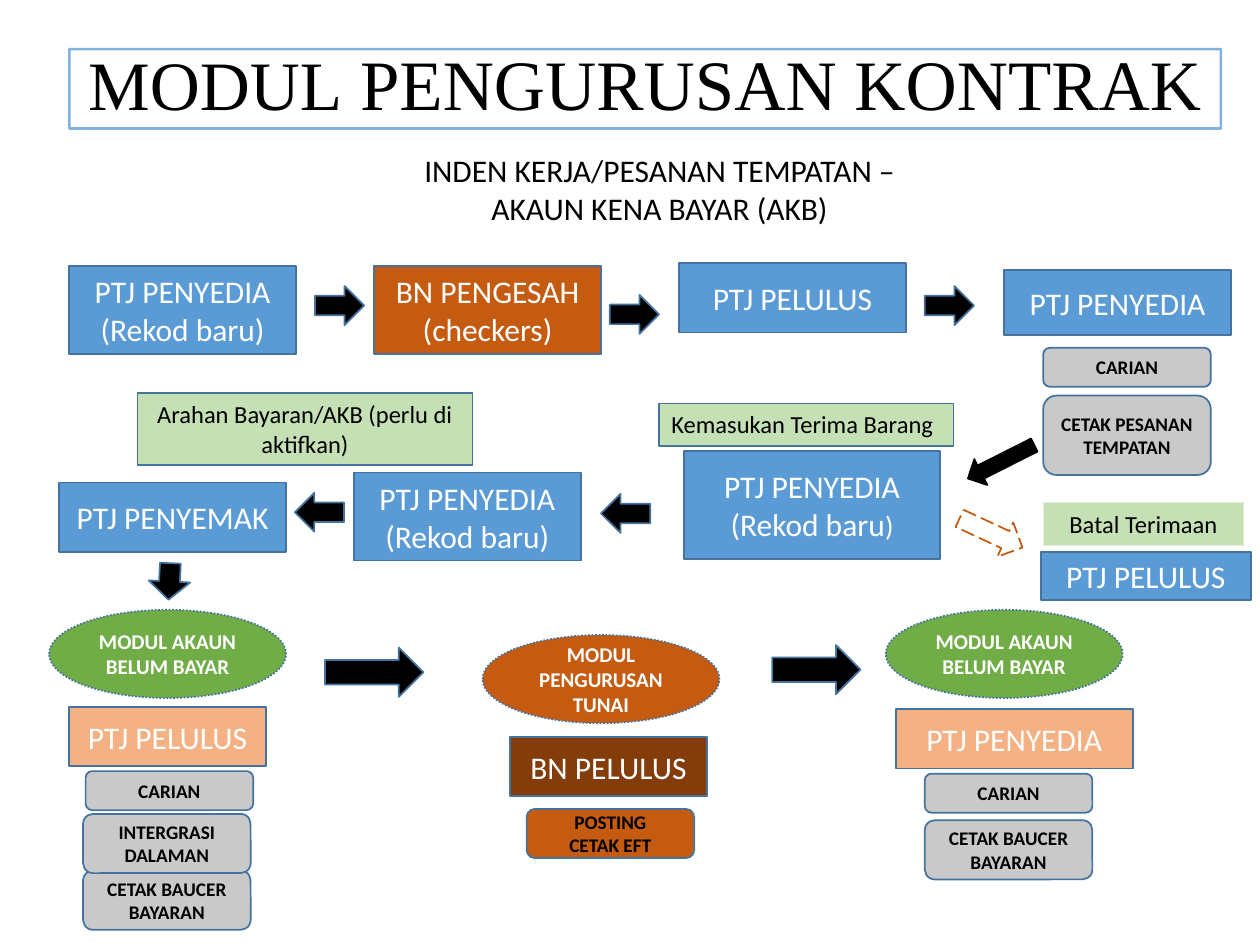
from lxml.etree import SubElement
from pptx import Presentation
from pptx.dml.color import RGBColor
from pptx.enum.dml import MSO_LINE
from pptx.enum.shapes import MSO_SHAPE
from pptx.enum.text import MSO_ANCHOR, MSO_AUTO_SIZE, PP_ALIGN
from pptx.oxml.ns import qn
from pptx.util import Inches, Pt

BLACK = RGBColor(0x00, 0x00, 0x00)
WHITE = RGBColor(0xFF, 0xFF, 0xFF)
BLUE = RGBColor(0x5B, 0x9B, 0xD5)
EDGE = RGBColor(0x43, 0x73, 0x9E)
RUST = RGBColor(0xC5, 0x5A, 0x11)
BROWN = RGBColor(0x84, 0x3C, 0x0B)
PEACH = RGBColor(0xF4, 0xB1, 0x83)
GREEN = RGBColor(0x70, 0xAD, 0x47)
PALE_GREEN = RGBColor(0xC5, 0xE0, 0xB4)
PALE_EDGE = RGBColor(0xE2, 0xF0, 0xD9)
GREY = RGBColor(0xC9, 0xC9, 0xC9)

# Common columns (left edges), rows (top edges) and sizes, in inches
MARGIN, RIGHT_COLUMN, END_COLUMN = 0.55, 8.28, 7.34
MODULE_ROW = 4.84
STEP_W, STEP_H, STEP_TALL = 1.8, 0.55, 0.7
NOTE_W, NOTE_H, NOTE_TALL = 1.33, 0.31, 0.47
MODULE_W, MODULE_H = 1.88, 0.7
ARROW_W, ARROW_H = 0.39, 0.31

prs = Presentation()
prs.slide_width, prs.slide_height = Inches(10), Inches(7.5)
slide = prs.slides.add_slide(prs.slide_layouts[5])


def write(target, text, size=18, color=WHITE, bold=False, font="Calibri",
          align=PP_ALIGN.CENTER, anchor=MSO_ANCHOR.MIDDLE, fit=MSO_AUTO_SIZE.NONE):
    """Fill a shape with text, one paragraph per line."""
    frame = target.text_frame
    frame.word_wrap, frame.auto_size, frame.vertical_anchor = True, fit, anchor
    frame.text = text
    for paragraph in frame.paragraphs:
        paragraph.alignment = align
        for run in paragraph.runs:
            run.font.name, run.font.size, run.font.bold = font, Pt(size), bold
            run.font.color.rgb = color
    return frame


def block(kind, left, top, width, height, fill=None, edge=EDGE, weight=1, dash=None):
    """Add a preset shape with flat fill and outline."""
    shape = slide.shapes.add_shape(kind, *map(Inches, (left, top, width, height)))
    shape.shadow.inherit = False
    if fill is None:
        shape.fill.background()
    else:
        shape.fill.solid()
        shape.fill.fore_color.rgb = fill
    shape.line.color.rgb, shape.line.width = edge, Pt(weight)
    if dash:
        shape.line.dash_style = dash
    return shape


# Title
title = slide.shapes.title
title.left, title.top, title.width, title.height = map(Inches, (MARGIN, 0.39, 9.14, 0.63))
title.line.color.rgb, title.line.width = BLUE, Pt(1.5)
edge_color = title.line.fill.fore_color and title._element.spPr.find(".//" + qn("a:srgbClr"))
SubElement(edge_color, qn("a:alpha"), val="76000")
heading = write(title, "MODUL", 39.6, BLACK, font="Times New Roman",
                anchor=MSO_ANCHOR.BOTTOM).paragraphs[0]
heading.line_spacing = 0.7
rest = heading.add_run()
rest.text = " PENGURUSAN KONTRAK"
rest.font.name, rest.font.size, rest.font.color.rgb = "Times New Roman", Pt(40.5), BLACK

# Subtitle
subtitle = slide.shapes.add_textbox(*map(Inches, (3.16, 1.15, 4.15, 0.71)))
write(subtitle, "INDEN KERJA/PESANAN TEMPATAN – AKAUN KENA BAYAR (AKB)", color=BLACK,
      anchor=MSO_ANCHOR.TOP, fit=MSO_AUTO_SIZE.SHAPE_TO_FIT_TEXT)

# Green captions above the steps
for text, left, top, width, height, edge, align in (
    ("Kemasukan Terima Barang", 5.23, 3.2, 2.34, 0.34, EDGE, PP_ALIGN.LEFT),
    ("Arahan Bayaran/AKB (perlu di aktifkan)", 1.09, 3.12, 2.66, 0.57, EDGE, PP_ALIGN.CENTER),
    ("Batal Terimaan", RIGHT_COLUMN, 3.99, 1.59, 0.34, PALE_EDGE, PP_ALIGN.CENTER),
):
    caption = block(MSO_SHAPE.RECTANGLE, left, top, width, height, PALE_GREEN, edge, 0.75)
    write(caption, text, 14, BLACK, align=align, anchor=MSO_ANCHOR.TOP,
          fit=MSO_AUTO_SIZE.SHAPE_TO_FIT_TEXT)

# Process steps
for text, left, top, width, height, fill in (
    ("PTJ PENYEDIA\n(Rekod baru)", MARGIN, 2.11, STEP_W, STEP_TALL, BLUE),
    ("BN PENGESAH\n(checkers)", 2.97, 2.11, STEP_W, STEP_TALL, RUST),
    ("PTJ PELULUS", 5.39, 2.09, STEP_W, STEP_H, BLUE),
    ("PTJ PENYEDIA", 7.97, 2.14, STEP_W, 0.52, BLUE),
    ("PTJ PENYEMAK", 0.47, 3.83, STEP_W, STEP_H, BLUE),
    ("PTJ PENYEDIA\n(Rekod baru)", 2.81, 3.75, STEP_W, STEP_TALL, BLUE),
    ("PTJ PELULUS", 8.26, 4.38, 1.67, 0.38, BLUE),
    ("PTJ PELULUS", MARGIN, 5.61, 1.56, NOTE_TALL, PEACH),
    ("BN PELULUS", 4.05, 5.85, 1.56, NOTE_TALL, BROWN),
    ("PTJ PENYEDIA", 7.11, 5.63, MODULE_W, NOTE_TALL, PEACH),
):
    write(block(MSO_SHAPE.RECTANGLE, left, top, width, height, fill), text)

# Goods receipt step, whose closing bracket is smaller
receipt = block(MSO_SHAPE.RECTANGLE, 5.43, 3.58, 2.03, 0.86, BLUE)
record_line = write(receipt, "PTJ PENYEDIA\n(Rekod baru").paragraphs[1]
bracket = record_line.add_run()
bracket.text = ")"
bracket.font.name, bracket.font.size, bracket.font.color.rgb = "Calibri", Pt(16), WHITE

# Modules
for text, left, top, fill in (
    ("MODUL AKAUN BELUM BAYAR", 0.39, MODULE_ROW, GREEN),
    ("MODUL PENGURUSAN TUNAI", 3.83, MODULE_ROW + 0.2, RUST),
    ("MODUL AKAUN BELUM BAYAR", 7.03, MODULE_ROW, GREEN),
):
    module = block(MSO_SHAPE.OVAL, left, top, MODULE_W, MODULE_H, fill,
                   dash=MSO_LINE.ROUND_DOT)
    write(module, text, 12, bold=True)

# Functions available at each step
for text, left, top, height, fill in (
    ("CARIAN", RIGHT_COLUMN, 2.76, NOTE_H, GREY),
    ("CETAK PESANAN TEMPATAN", RIGHT_COLUMN, 3.14, 0.63, GREY),
    ("CARIAN", 0.68, 6.12, NOTE_H, GREY),
    ("CETAK BAUCER BAYARAN", 0.66, 6.91, NOTE_TALL, GREY),
    ("INTERGRASI DALAMAN", 0.66, 6.46, NOTE_TALL, GREY),
    ("POSTING\nCETAK EFT", 4.18, 6.42, 0.39, RUST),
    ("CARIAN", END_COLUMN, 6.14, NOTE_H, GREY),
    ("CETAK BAUCER BAYARAN", END_COLUMN, 6.51, NOTE_TALL, GREY),
):
    function = block(MSO_SHAPE.ROUNDED_RECTANGLE, left, top, NOTE_W, height, fill)
    write(function, text, 11, BLACK, bold=True)

# Flow arrows
for left, top, width, height, angle, fill, edge, dash in (
    (2.5, 2.27, ARROW_W, ARROW_H, 0, BLACK, EDGE, None),
    (4.84, 2.34, ARROW_W, ARROW_H, 0, BLACK, EDGE, None),
    (END_COLUMN, 2.27, ARROW_W, ARROW_H, 0, BLACK, EDGE, None),
    (4.77, 3.92, ARROW_W, ARROW_H, 180, BLACK, EDGE, None),
    (2.34, 3.91, ARROW_W, ARROW_H, 180, BLACK, EDGE, None),
    (1.2, 4.45, 0.29, 0.33, 92.9, BLACK, EDGE, None),
    (2.58, 5.14, 0.78, 0.39, 0, BLACK, EDGE, None),
    (6.13, 5.12, 0.7, 0.39, 0, BLACK, EDGE, None),
    (7.65, 3.55, 0.59, 0.23, 153.2, BLACK, BLACK, None),
    (7.59, 4.08, 0.55, 0.3, 24.9, None, RUST, MSO_LINE.LONG_DASH),
):
    arrow = block(MSO_SHAPE.RIGHT_ARROW, left, top, width, height, fill, edge, dash=dash)
    arrow.rotation = angle

prs.save("out.pptx")
